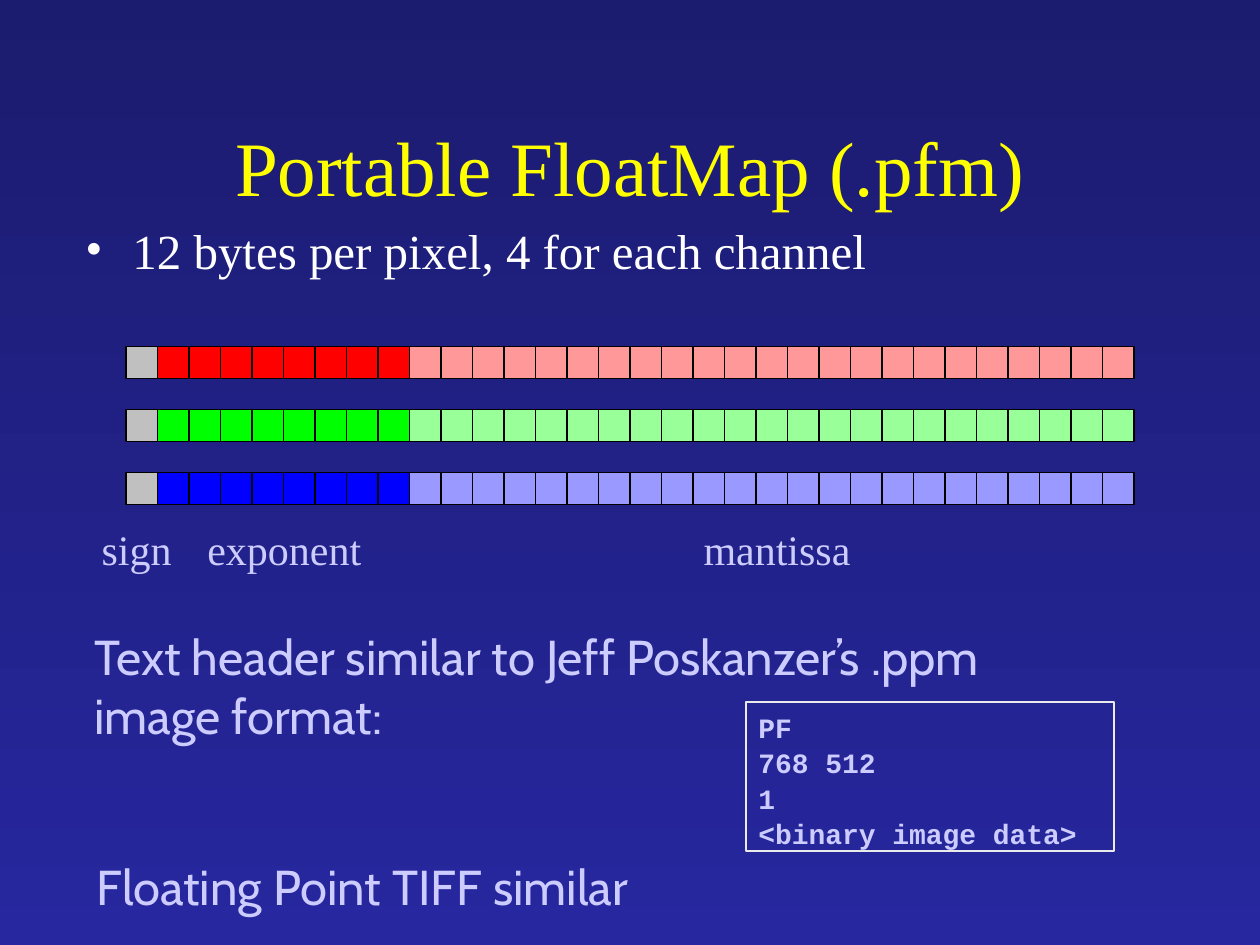
from dataclasses import dataclass

import pptx
import pptx.dml.color
import pptx.enum.shapes
import pptx.enum.text
import pptx.oxml
import pptx.oxml.ns
import pptx.util

Cm = pptx.util.Cm
Pt = pptx.util.Pt
RGBColor = pptx.dml.color.RGBColor
PP_ALIGN = pptx.enum.text.PP_ALIGN
MSO_ANCHOR = pptx.enum.text.MSO_ANCHOR
MSO_AUTO_SIZE = pptx.enum.text.MSO_AUTO_SIZE
qn = pptx.oxml.ns.qn

BG_TOP = RGBColor(0x1B, 0x1B, 0x6F)
BG_BOTTOM = RGBColor(0x27, 0x27, 0x9F)
YELLOW = RGBColor(0xFF, 0xFF, 0x00)
WHITE = RGBColor(0xFF, 0xFF, 0xFF)
LAVENDER = RGBColor(0xCC, 0xCC, 0xFF)
FRAME = RGBColor(0xEA, 0xEA, 0xEA)
BLACK = RGBColor(0x00, 0x00, 0x00)
GRAY = RGBColor(0xC0, 0xC0, 0xC0)
RED = RGBColor(0xFF, 0x00, 0x00)
LIGHT_RED = RGBColor(0xFF, 0x99, 0x99)
GREEN = RGBColor(0x00, 0xFF, 0x00)
LIGHT_GREEN = RGBColor(0x99, 0xFF, 0x99)
BLUE = RGBColor(0x00, 0x00, 0xFF)
LIGHT_BLUE = RGBColor(0x99, 0x99, 0xFF)

SERIF = "Times New Roman"
SANS = "Cabin"
MONO = "Courier New"

BITS = 32
EXPONENT_BITS = 8
ROW_LEFT, ROW_TOP, ROW_WIDTH = Cm(2.54), Cm(6.99), Cm(20.32)
ROW_PITCH = Cm(1.27)
CELL = ROW_WIDTH // BITS

NS = 'xmlns:a="http://schemas.openxmlformats.org/drawingml/2006/main"'
TEXT_SHADOW = (
    f'<a:effectLst {NS}><a:outerShdw dist="38100" dir="2700000" algn="tl">'
    '<a:srgbClr val="000000"/></a:outerShdw></a:effectLst>'
)
BULLET = (
    f'<a:buClr {NS}><a:srgbClr val="FFFFFF"/></a:buClr>',
    f'<a:buFont {NS} typeface="{SERIF}"/>',
    f'<a:buChar {NS} char="•"/>',
)


@dataclass
class Channel:
    exponent: RGBColor
    mantissa: RGBColor


@dataclass
class Label:
    text: str
    left: float
    top: float
    width: float
    height: float
    size: int
    font: str = SERIF
    color: RGBColor = LAVENDER
    align: PP_ALIGN = PP_ALIGN.LEFT
    anchor: MSO_ANCHOR = MSO_ANCHOR.TOP
    spacing: float = 1.06
    bold: bool = False
    bullet: bool = False
    shadow: bool = False
    framed: bool = False


CHANNELS = [
    Channel(RED, LIGHT_RED),
    Channel(GREEN, LIGHT_GREEN),
    Channel(BLUE, LIGHT_BLUE),
]

LABELS = [
    Label("Portable FloatMap (.pfm)", 0, 1.7, 25.4, 3.18, 44, color=YELLOW,
          align=PP_ALIGN.CENTER, anchor=MSO_ANCHOR.MIDDLE, shadow=True),
    Label("12 bytes per pixel, 4 for each channel", 1.47, 4.24, 22.43, 2.11, 28,
          color=WHITE, bullet=True),
    Label("sign", 1.27, 10.36, 2.97, 1.27, 24, align=PP_ALIGN.CENTER),
    Label("exponent", 3.61, 10.36, 4.24, 1.27, 24, align=PP_ALIGN.CENTER),
    Label("mantissa", 8.26, 10.36, 14.81, 1.27, 24, align=PP_ALIGN.CENTER),
    Label("PF\n768 512\n1\n<binary image data>", 15.04, 14.15, 7.42, 3, 16,
          font=MONO, bold=True, framed=True),
    Label("Floating Point TIFF similar", 1.7, 17.15, 22.43, 1.47, 28,
          font=SANS, spacing=1.0, shadow=True),
    Label("Text header similar to Jeff Poskanzer’s .ppm\vimage format:",
          1.65, 12.5, 20.47, 2.62, 28, font=SANS, spacing=1.0),
]


def set_all(obj: object, values: dict) -> None:
    for name, value in values.items():
        setattr(obj, name, value)


def draw_cell(s: pptx.slide.Slide, left: int, top: int, color: RGBColor) -> None:
    sp = s.shapes.add_shape(
        pptx.enum.shapes.MSO_SHAPE.RECTANGLE, left, top, CELL, CELL)
    sp.shadow.inherit = False
    sp.fill.solid()
    sp.fill.fore_color.rgb = color
    sp.line.color.rgb = BLACK
    sp.line.width = Pt(0.75)


def draw_channel(s: pptx.slide.Slide, channel: Channel, top: int) -> None:
    colors = [GRAY] + [channel.exponent] * EXPONENT_BITS
    colors += [channel.mantissa] * (BITS - len(colors))
    for bit, color in enumerate(colors):
        draw_cell(s, ROW_LEFT + bit * CELL, top, color)


def draw_label(s: pptx.slide.Slide, label: Label) -> None:
    sp = s.shapes.add_textbox(
        Cm(label.left), Cm(label.top), Cm(label.width), Cm(label.height))
    if label.framed:
        sp.line.color.rgb = FRAME
        sp.line.width = Pt(1)
    tf = sp.text_frame
    set_all(tf, {
        "text": label.text,
        "word_wrap": True,
        "auto_size": MSO_AUTO_SIZE.NONE,
        "vertical_anchor": label.anchor,
    })
    for p in tf.paragraphs:
        set_all(p, {"alignment": label.align, "line_spacing": label.spacing})
        if label.bullet:
            pPr = p._p.get_or_add_pPr()
            pPr.set("marL", str(Cm(0.95)))
            pPr.set("indent", str(-Cm(0.95)))
            for xml in BULLET:
                pPr.append(pptx.oxml.parse_xml(xml))
        for r in p.runs:
            set_all(r.font, {
                "name": label.font,
                "size": Pt(label.size),
                "bold": label.bold,
            })
            r.font.color.rgb = label.color
            if label.shadow:
                latin = r._r.get_or_add_rPr().find(qn("a:latin"))
                latin.addprevious(pptx.oxml.parse_xml(TEXT_SHADOW))


def main() -> None:
    prs = pptx.Presentation()
    set_all(prs, {"slide_width": Cm(25.4), "slide_height": Cm(19.05)})
    s = prs.slides.add_slide(prs.slide_layouts[6])
    fill = s.background.fill
    fill.gradient()
    fill.gradient_angle = 270
    for stop, color in zip(fill.gradient_stops, (BG_TOP, BG_BOTTOM)):
        stop.color.rgb = color
    for row, channel in enumerate(CHANNELS):
        draw_channel(s, channel, ROW_TOP + row * ROW_PITCH)
    for label in LABELS:
        draw_label(s, label)
    prs.save("out.pptx")


if __name__ == "__main__":
    main()
